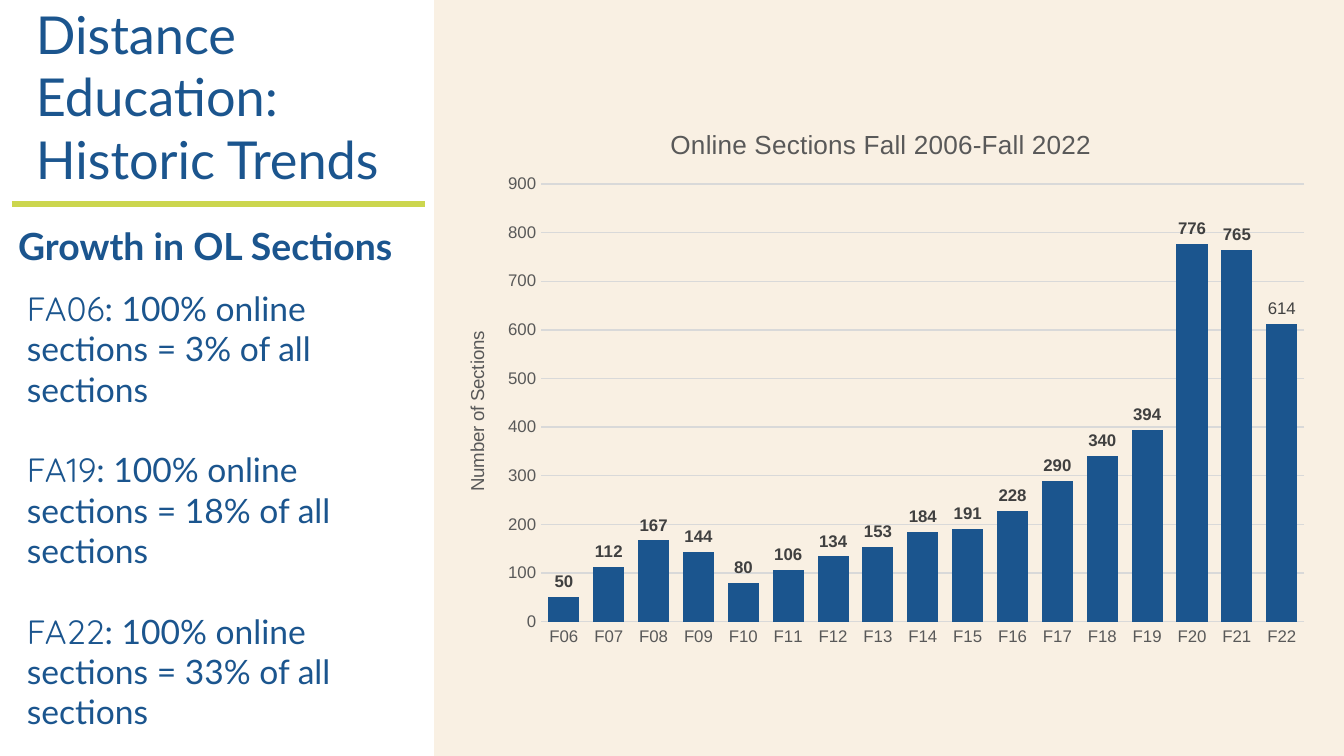
from lxml.etree import SubElement
from pptx import Presentation
from pptx.chart.data import CategoryChartData
from pptx.dml.color import RGBColor
from pptx.enum.chart import XL_CHART_TYPE, XL_LABEL_POSITION, XL_TICK_MARK
from pptx.enum.shapes import MSO_CONNECTOR, MSO_SHAPE
from pptx.enum.text import MSO_ANCHOR
from pptx.oxml.ns import qn
from pptx.util import Pt

PX = 6804
BLUE, LIME, CREAM = "1B558E", "CCD64E", "F9F0E3"
GREY, DARK, PALE = "595959", "404040", "D9D9D9"
hue = RGBColor.from_string


def style(font, tint, **look):
    font.color.rgb = hue(tint)
    for key, val in look.items():
        setattr(font, key, val)


def place(node, spot, **rule):
    for old in node.findall(qn("c:layout")):
        node.remove(old)
    lay = SubElement(node, qn("c:layout"))
    node.insert(spot, lay)
    man = SubElement(lay, qn("c:manualLayout"))
    for key, val in rule.items():
        SubElement(man, qn("c:" + key)).set("val", str(val))


deck = Presentation()
deck.slide_width, deck.slide_height = 1344 * PX, 756 * PX
slide = deck.slides.add_slide(deck.slide_layouts[6])
shapes = slide.shapes

panel = shapes.add_shape(MSO_SHAPE.RECTANGLE, 434 * PX, 0, 910 * PX, 756 * PX)
panel.shadow.inherit = False
panel.fill.solid()
panel.fill.fore_color.rgb = hue(CREAM)
panel.line.fill.background()

frames = []
for box, pad, side in [
    ((27, 288, 351, 448), (0, 0), MSO_ANCHOR.TOP),
    ((5, 216, 430, 59), (13, 7), MSO_ANCHOR.TOP),
    ((23, 69, 411, 134), (13, 13), MSO_ANCHOR.BOTTOM),
]:
    frame = shapes.add_textbox(*[n * PX for n in box]).text_frame
    frame.word_wrap = True
    frame.vertical_anchor = side
    frame.margin_left = frame.margin_right = pad[0] * PX
    frame.margin_top = frame.margin_bottom = pad[1] * PX
    frames.append(frame)
body, head, title = frames

terms = [("FA06", 3), ("FA19", 18), ("FA22", 33)]
for i, (term, share) in enumerate(terms):
    para = body.add_paragraph() if i else body.paragraphs[0]
    if i:
        para.space_before = Pt(21.6)
    tail = f": 100% online sections = {share}% of all sections"
    for text, face in [(term, "Quicksand"), (tail, "Lato")]:
        run = para.add_run()
        run.text = text
        style(run.font, BLUE, size=Pt(18), name=face)

for frame, text, size, bold in [
    (head, "Growth in OL Sections", 20, True),
    (title, "Distance Education: Historic Trends", 28, False),
]:
    run = frame.paragraphs[0].add_run()
    run.text = text
    style(run.font, BLUE, size=Pt(size), name="Lato", bold=bold)

rule = shapes.add_connector(MSO_CONNECTOR.STRAIGHT, 12 * PX, 204 * PX, 425 * PX, 204 * PX)
rule.line.color.rgb = hue(LIME)
rule.line.width = Pt(3)
SubElement(rule._element.spPr, qn("a:effectLst"))

data = CategoryChartData()
data.categories = [f"F{year:02d}" for year in range(6, 23)]
data.add_series("Series 1", [50, 112, 167, 144, 80, 106, 134, 153, 184,
                             191, 228, 290, 340, 394, 776, 765, 613])
chart = shapes.add_chart(XL_CHART_TYPE.COLUMN_CLUSTERED, 435 * PX, 101 * PX,
                         887 * PX, 554 * PX, data).chart
chart.has_legend = False
style(chart.font, "000000", size=Pt(10), name="Arial")

cats, vals = chart.category_axis, chart.value_axis
for axis in (cats, vals):
    axis.major_tick_mark = axis.minor_tick_mark = XL_TICK_MARK.NONE
    style(axis.tick_labels.font, GREY, size=Pt(9), name="Arial")
vals.minimum_scale, vals.maximum_scale, vals.major_unit = 0, 900, 100
vals.has_major_gridlines = True
vals.format.line.fill.background()
for line in (cats.format.line, vals.major_gridlines.format.line):
    line.color.rgb = hue(PALE)
    line.width = Pt(0.75)

chart.has_title = vals.has_title = True
for label, text, size, left, top in [
    (chart.chart_title, "Online Sections Fall 2006-Fall 2022", 14, 0.26, 0.04),
    (vals.axis_title, "Number of Sections", 10, 0.03, 0.41),
]:
    run = label.text_frame.paragraphs[0].add_run()
    run.text = text
    style(run.font, GREY, size=Pt(size), name="Arial", bold=False)
    place(label._element, 1, xMode="edge", yMode="edge", x=left, y=top)
turn = vals.axis_title._element.find(".//" + qn("a:bodyPr"))
turn.set("rot", "-5400000")
turn.set("vert", "horz")
place(chart._chartSpace.chart.plotArea, 0, layoutTarget="inner", xMode="edge",
      yMode="edge", x=0.12, y=0.15, w=0.86, h=0.79)

plot = chart.plots[0]
plot.gap_width, plot.overlap, plot.vary_by_categories = 44, -27, False
bars = plot.series[0]
bars.format.fill.solid()
bars.format.fill.fore_color.rgb = hue(BLUE)
tags = bars.data_labels
tags.show_value = True
tags.position = XL_LABEL_POSITION.OUTSIDE_END
style(tags.font, DARK, size=Pt(9), name="Arial", bold=True)
last = bars.points[16].data_label
run = last.text_frame.paragraphs[0].add_run()
run.text = "614"
style(run.font, DARK, size=Pt(9), name="Arial", bold=False)
last.position = XL_LABEL_POSITION.OUTSIDE_END

deck.save("out.pptx")
